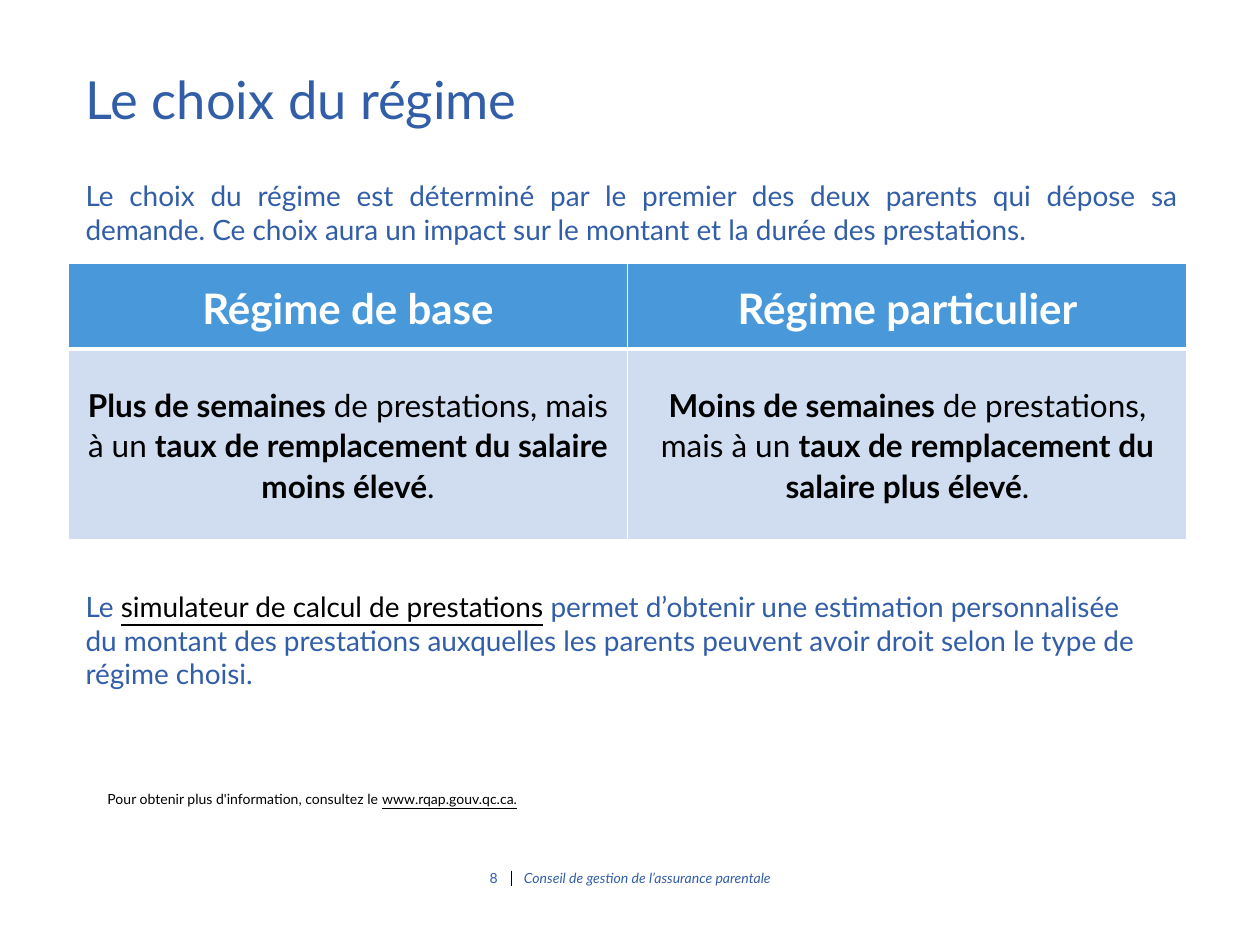
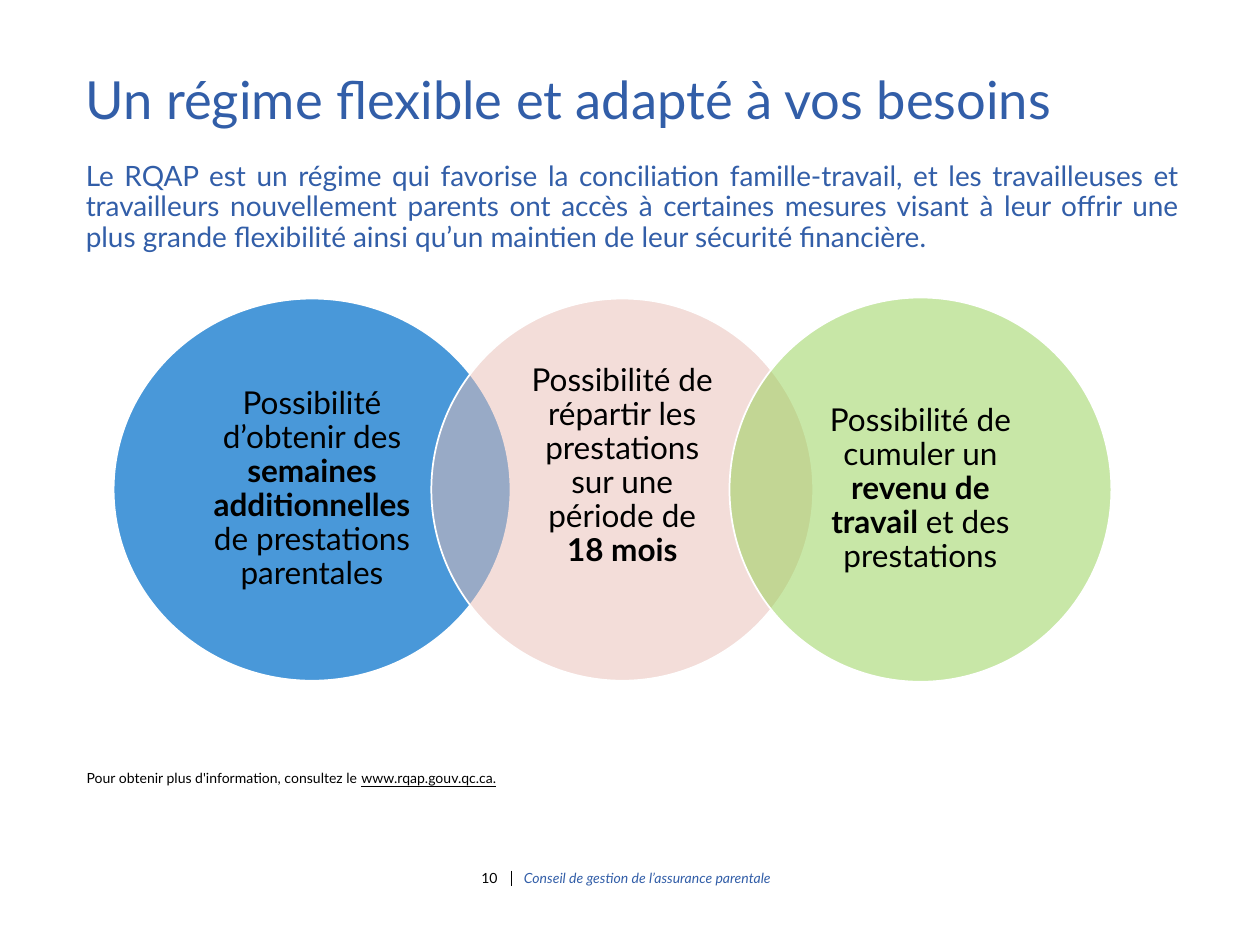
from lxml.etree import SubElement
from pptx import Presentation
from pptx.dml.color import RGBColor
from pptx.enum.shapes import MSO_CONNECTOR, MSO_SHAPE
from pptx.enum.text import MSO_ANCHOR as Anchor, PP_ALIGN as Align
from pptx.oxml.ns import qn
from pptx.util import Pt

FONT = "Lato"
COLORS = {
    "blue": "325EA8",
    "black": "000000",
    "white": "FFFFFF",
    "sky": "4998D9",
    "pale": "D0DDF1",
    "rose": "E8BDB5",
    "green": "92D050",
}
TITLE_BOX = (41.8, 33.8, 638.6, 49)
INFO_SIZE = (620.6, 21.6)
FOOTER_BOX = (231, 487.4, 233.5, 28.8)


def rgb(name):
    return RGBColor.from_string(COLORS[name])


def write(paragraph, pieces, size, color, align=Align.LEFT, spacing=1.0, after=0):
    """Fill a paragraph with (text, style) pieces; b is bold, i italic, u a black link."""
    paragraph.alignment = align
    paragraph.line_spacing = spacing
    paragraph.space_before, paragraph.space_after = Pt(0), Pt(after)
    for text, style in pieces:
        run = paragraph.add_run()
        run.text = text
        font = run.font
        font.name, font.size = FONT, Pt(size)
        font.bold, font.italic, font.underline = (flag in style for flag in "biu")
        font.color.rgb = rgb("black" if "u" in style else color)


def set_margins(target, left, top, right, bottom):
    target.margin_left, target.margin_top = Pt(left), Pt(top)
    target.margin_right, target.margin_bottom = Pt(right), Pt(bottom)


def move(shape, box):
    shape.left, shape.top, shape.width, shape.height = map(Pt, box)


def add_text(slide, box, pieces, size, color, **layout):
    frame = slide.shapes.add_textbox(*map(Pt, box)).text_frame
    frame.word_wrap = True
    write(frame.paragraphs[0], pieces, size, color, **layout)
    return frame


def add_title(slide, text):
    title = slide.shapes.title
    move(title, TITLE_BOX)
    title.text_frame.vertical_anchor = Anchor.MIDDLE
    write(title.text_frame.paragraphs[0], [(text, "")], 30, "blue", spacing=0.9)


def add_footer(slide, box, number, number_color):
    """Place the page number, the thin divider and the name of the council."""
    left, top, width, height = box
    divider_x = left + 61.3
    page = add_text(slide, (left, top, 60.5, height), [(number, "")], 8,
                    number_color, align=Align.RIGHT)
    page.vertical_anchor = Anchor.MIDDLE
    add_text(slide, (divider_x, top + 5.8, width - 61.3, 17.3),
             [("Conseil de gestion de l’assurance parentale", "i")], 8, "blue")
    divider = slide.shapes.add_connector(
        MSO_CONNECTOR.STRAIGHT, Pt(divider_x), Pt(top + 10.1), Pt(divider_x), Pt(top + 18.8))
    divider.line.color.rgb = rgb("black")
    divider.line.width = Pt(0.5)
    SubElement(divider.element.spPr, qn("a:effectLst"))


def add_info(slide, left, top):
    frame = add_text(slide, (left, top, *INFO_SIZE), [
        ("Pour obtenir plus d'information, consultez le ", ""),
        ("www.rqap.gouv.qc.ca.", "u")], 8, "black", spacing=0.9, after=3)
    set_margins(frame, 0, 8.6, 0, 0)


def set_borders(cell, widths):
    """Draw white cell borders, given their widths by side."""
    properties = cell._tc.get_or_add_tcPr()
    for position, side in enumerate("LRTB"):
        border = SubElement(properties, qn(f"a:ln{side}"), w=str(Pt(widths[side])))
        fill = SubElement(border, qn("a:solidFill"))
        SubElement(fill, qn("a:srgbClr"), val=COLORS["white"])
        properties.insert(position, border)


def add_plan_table(slide, box, rows):
    left, top, width, height = box
    table = slide.shapes.add_table(len(rows), 2, *map(Pt, box)).table
    styles = [
        (49, "sky", 24, "white", dict(L=1, R=1, T=1, B=3)),
        (height - 49, "pale", 18, "black", dict(L=1, R=1, T=3, B=1)),
    ]
    for r, (row, (row_height, fill, size, color, borders)) in enumerate(zip(rows, styles)):
        table.rows[r].height = Pt(row_height)
        for c, pieces in enumerate(row):
            cell = table.cell(r, c)
            cell.fill.solid()
            cell.fill.fore_color.rgb = rgb(fill)
            set_borders(cell, borders)
            cell.vertical_anchor = Anchor.MIDDLE
            set_margins(cell, 5, 0, 5, 0)
            write(cell.text_frame.paragraphs[0], pieces, size, color,
                  align=Align.CENTER, spacing=1.07, after=8)


def add_measure(slide, box, color, opacity, side_margin, bottom_margin, pieces):
    """Place one circle of the overlapping row, with its text."""
    circle = slide.shapes.add_shape(MSO_SHAPE.OVAL, *map(Pt, box))
    circle.shadow.inherit = False
    circle.fill.solid()
    circle.fill.fore_color.rgb = rgb(color)
    fill_color = circle.element.spPr.find(f"{qn('a:solidFill')}/{qn('a:srgbClr')}")
    SubElement(fill_color, qn("a:alpha"), val=str(opacity * 1000))
    circle.line.color.rgb = rgb("white")
    circle.line.width = Pt(1)
    frame = circle.text_frame
    frame.word_wrap = True
    frame.vertical_anchor = Anchor.MIDDLE
    set_margins(frame, side_margin, 0, side_margin, bottom_margin)
    write(frame.paragraphs[0], pieces, 18, "black", align=Align.CENTER, spacing=0.9)


def add_measures(slide, box):
    left, top, width, height = box
    measures = [
        (0, 226.8, 0.6, "sky", 100, 22, 0, [
            ("Possibilité d’obtenir des ", ""), ("semaines additionnelles ", "b"),
            ("de prestations parentales", "")]),
        (181.6, 218.2, 0.6, "rose", 50, 24.5, 27, [
            ("Possibilité de répartir les prestations sur une période de ", ""),
            ("18 mois", "b")]),
        (width - 218.2, 218.2, 0, "green", 50, 22.5, 0, [
            ("Possibilité de cumuler un ", ""), ("revenu de travail ", "b"),
            ("et des prestations", "")]),
    ]
    for offset, diameter, inset, *details in measures:
        add_measure(slide, (left + offset, top + inset, diameter, height - 2 * inset), *details)


def add_intro(body, box, text):
    """Turn the body placeholder into one justified paragraph without a bullet."""
    move(body, box)
    paragraph = body.text_frame.paragraphs[0]
    properties = paragraph._p.get_or_add_pPr()
    properties.set("marL", "0")
    properties.set("indent", "0")
    SubElement(properties, qn("a:buNone"))
    write(paragraph, [(text, "")], 16, "blue", align=Align.JUSTIFY, spacing=0.9, after=3)


def build_choice_slide(deck):
    slide = deck.slides.add_slide(deck.slide_layouts[5])
    add_title(slide, "Le choix du régime")
    add_text(slide, (41.8, 98.6, 638.6, 46), [
        ("Le choix du régime est déterminé par le premier des deux parents qui dépose sa "
         "demande. Ce choix aura un impact sur le montant et la durée des prestations.", "")],
        16, "blue", align=Align.JUSTIFY)
    add_plan_table(slide, (39, 150.5, 639.4, 157.7), [
        [[("Régime de base", "b")], [("Régime particulier", "b")]],
        [[("Plus de semaines ", "b"), ("de prestations, mais à un ", ""),
          ("taux de remplacement du salaire moins élevé", "b"), (".", "")],
         [("Moins de semaines ", "b"), ("de prestations, mais à un ", ""),
          ("taux de remplacement du salaire plus élevé", "b"), (".", "")]],
    ])
    add_text(slide, (41.8, 333.4, 615.6, 87), [
        ("Le ", ""), ("simulateur de calcul de prestations", "u"),
        (" permet d’obtenir une estimation personnalisée du montant des prestations "
         "auxquelles les parents peuvent avoir droit selon le type de régime choisi.", "")],
        16, "blue")
    add_info(slide, 61.4, 444.2)
    add_footer(slide, FOOTER_BOX, "8", "blue")


def build_flexibility_slide(deck):
    slide = deck.slides.add_slide(deck.slide_layouts[1])
    add_title(slide, "Un régime flexible et adapté à vos besoins")
    add_intro(slide.placeholders[1], (41.8, 89.3, 639.4, 334.8),
              "Le RQAP est un régime qui favorise la conciliation famille-travail, et les "
              "travailleuses et travailleurs nouvellement parents ont accès à certaines "
              "mesures visant à leur offrir une plus grande flexibilité ainsi qu’un maintien "
              "de leur sécurité financière.")
    add_measures(slide, (64.9, 170, 570.2, 219.6))
    add_info(slide, 49.5, 432)
    add_footer(slide, FOOTER_BOX, "10", "black")


def main():
    deck = Presentation()
    deck.slide_width, deck.slide_height = Pt(720), Pt(540)
    build_choice_slide(deck)
    build_flexibility_slide(deck)
    deck.save("out.pptx")


if __name__ == "__main__":
    main()
